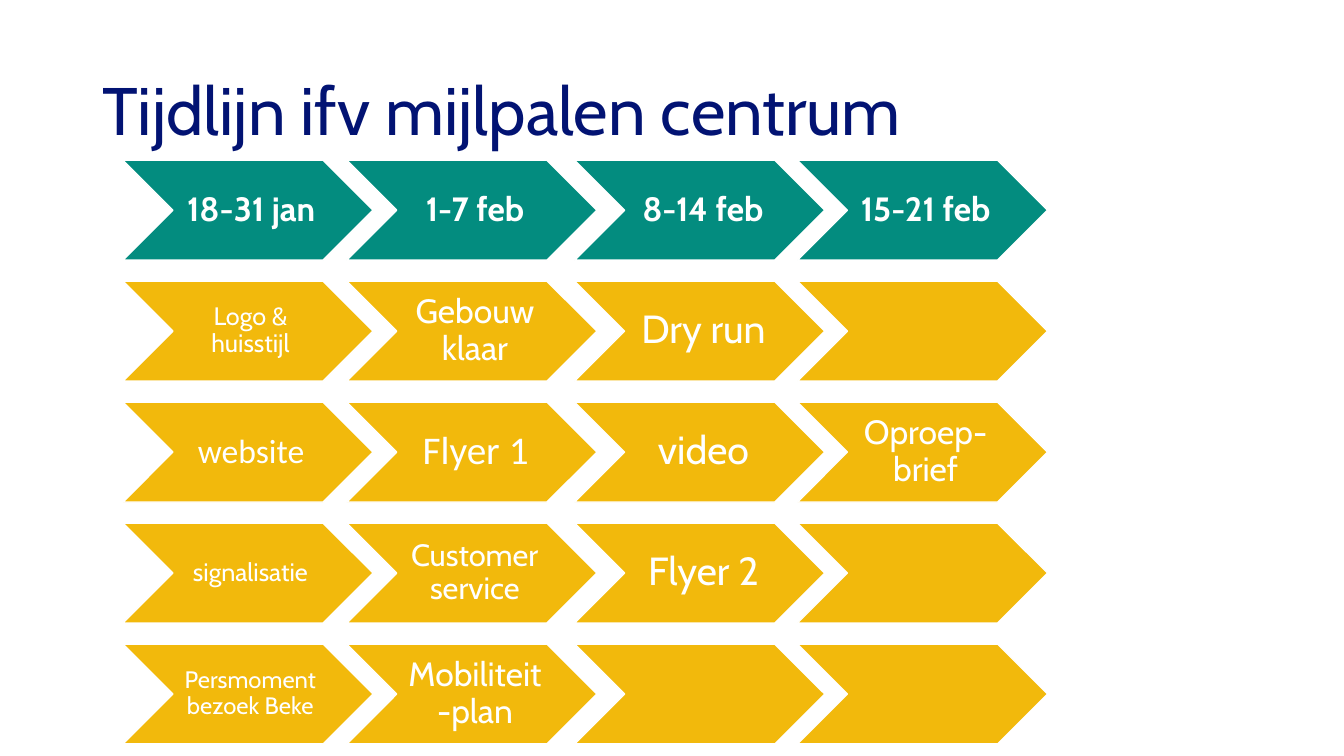
from pptx import Presentation
from pptx.dml.color import RGBColor
from pptx.enum.shapes import MSO_SHAPE
from pptx.enum.text import MSO_ANCHOR, PP_ALIGN
from pptx.util import Inches, Pt

CHEVRON = MSO_SHAPE.CHEVRON
MIDDLE = MSO_ANCHOR.MIDDLE
LEFT = PP_ALIGN.LEFT
CENTER = PP_ALIGN.CENTER

COLORS = {"navy": "021373", "teal": "038C7F", "yellow": "F2B90C", "white": "FFFFFF"}
FONT = "Cabin"

COLUMN_LEFTS = [1.22, 3.44, 5.7, 7.91]
TOP, ROW_PITCH = 1.59, 1.2
CHEVRON_WIDTH, CHEVRON_HEIGHT = 2.48, 0.99

WEEKS = ["18-31 jan", "1-7 feb", "8-14 feb", "15-21 feb"]
MILESTONES = [
    [("Logo & huisstijl", 18, FONT), ("Gebouw klaar", 24, FONT), ("Dry run", 28, FONT), None],
    [("website", 24, "Calibri"), ("Flyer 1", 28, "Calibri"), ("video", 28, FONT),
     ("Oproep- brief", 24, FONT)],
    [("signalisatie", 18, FONT), ("Customer service", 22, FONT), ("Flyer 2", 28, FONT), None],
    [("Persmoment bezoek Beke", 17, FONT), ("Mobiliteit-plan", 24, FONT), None, None],
]


def rgb(name):
    return RGBColor.from_string(COLORS[name])


def write_text(tf, text, size, font, color, align, bold=False):
    tf.word_wrap = True
    tf.vertical_anchor = MIDDLE
    p = tf.paragraphs[0]
    p.alignment = align
    p.line_spacing = 0.9
    r = p.add_run()
    r.text = text
    r.font.size = Pt(size)
    r.font.name = font
    r.font.bold = bold
    r.font.color.rgb = rgb(color)


def add_title(s, text):
    sp = s.shapes.add_textbox(Inches(0.92), Inches(0.4), Inches(11.5), Inches(1.45))
    write_text(sp.text_frame, text, 48, FONT, "navy", LEFT)


def add_chevron(row, left, top, fill, label, bold):
    sp = row.shapes.add_shape(CHEVRON, Inches(left), Inches(top),
                              Inches(CHEVRON_WIDTH), Inches(CHEVRON_HEIGHT))
    sp.shadow.inherit = False
    sp.fill.solid()
    sp.fill.fore_color.rgb = rgb(fill)
    sp.line.color.rgb = rgb("white")
    sp.line.width = Pt(1)
    if label:
        text, size, font = label
        tf = sp.text_frame
        tf.margin_left = Inches(size / 240)
        tf.margin_top = tf.margin_right = tf.margin_bottom = Inches(size / 650)
        write_text(tf, text, size, font, "white", CENTER, bold)


def add_row(s, index, labels, fill, bold=False):
    row = s.shapes.add_group_shape()
    for left, label in zip(COLUMN_LEFTS, labels):
        add_chevron(row, left, TOP + index * ROW_PITCH, fill, label, bold)


def main():
    prs = Presentation()
    prs.slide_width = Inches(13.33)
    prs.slide_height = Inches(7.5)
    s = prs.slides.add_slide(prs.slide_layouts[6])
    add_title(s, "Tijdlijn ifv mijlpalen centrum")
    add_row(s, 0, [(week, 24, FONT) for week in WEEKS], "teal", bold=True)
    for index, labels in enumerate(MILESTONES, start=1):
        add_row(s, index, labels, "yellow")
    prs.save("out.pptx")


if __name__ == "__main__":
    main()
